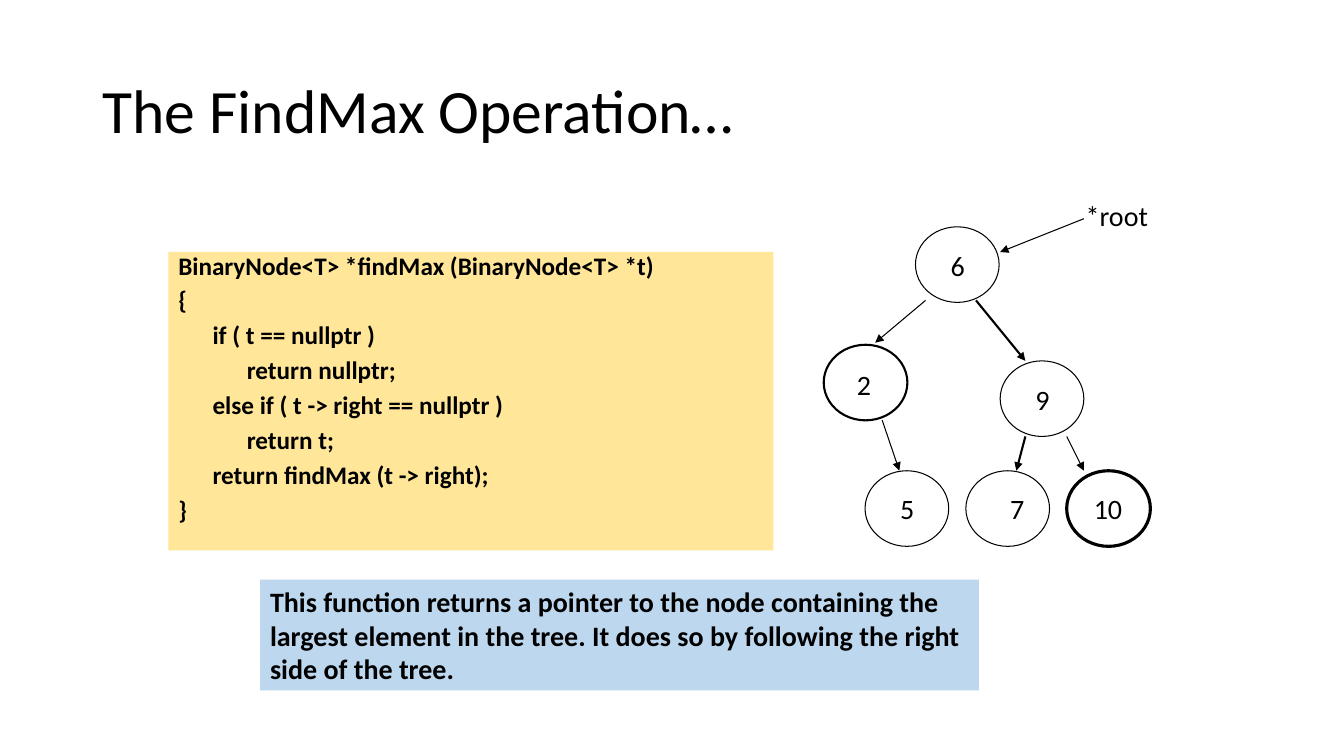
"""Build a slide on finding the largest element of a binary search tree."""
from dataclasses import dataclass

from lxml import etree
from pptx import Presentation, util as u
from pptx.dml.color import RGBColor
from pptx.enum import shapes, text
from pptx.oxml import ns


@dataclass(frozen=True)
class Theme:
    """Colours, font and type sizes."""
    font: str = "Calibri"
    ink: str = "000000"
    sand: str = "FFE699"
    sky: str = "BDD7EE"
    title: int = 44
    code: int = 18
    body: int = 20


class Board:
    """Draws styled elements on one slide."""

    def __init__(self, slide, theme):
        """Keep the slide and its style."""
        self.items = slide.shapes
        self.theme = theme

    def fill_text(self, shape, lines, size, bold=False, wrap=False):
        """Fill a shape with left-aligned paragraphs."""
        frame = shape.text_frame
        frame.text = "\n".join(lines)
        frame.word_wrap = wrap
        frame.vertical_anchor = text.MSO_ANCHOR.TOP
        for par in frame.paragraphs:
            par.alignment = text.PP_ALIGN.LEFT
            for run in par.runs:
                run.font.name = self.theme.font
                run.font.size = u.Pt(size)
                run.font.bold = bold
                run.font.color.rgb = RGBColor.from_string(self.theme.ink)
        return frame

    def label(self, words, box, size):
        """Add a one-line text box."""
        shape = self.items.add_textbox(*map(u.Inches, box))
        return self.fill_text(shape, [words], size)

    def title(self, words, box):
        """Add the slide heading."""
        frame = self.label(words, box, self.theme.title)
        frame.word_wrap = True
        frame.vertical_anchor = text.MSO_ANCHOR.MIDDLE
        frame.paragraphs[0].line_spacing = 0.9

    def shape(self, kind, box):
        """Add a preset shape without a shadow."""
        shape = self.items.add_shape(kind, *map(u.Inches, box))
        shape.shadow.inherit = False
        return shape

    def panel(self, lines, box, fill, size, wrap=False):
        """Add a filled rectangle with bold text."""
        shape = self.shape(shapes.MSO_SHAPE.RECTANGLE, box)
        shape.fill.solid()
        shape.fill.fore_color.rgb = RGBColor.from_string(fill)
        shape.line.fill.background()
        return self.fill_text(shape, lines, size, True, wrap)

    def code(self, rows, box):
        """Add a code panel from pairs of depth and line."""
        lines = [line for _, line in rows]
        frame = self.panel(lines, box, self.theme.sand, self.theme.code, True)
        for par, (depth, _) in zip(frame.paragraphs, rows):
            par.line_spacing = 0.75
            par.space_before = u.Pt(8.7)
            props = par._p.get_or_add_pPr()
            props.set("marL", str(u.Inches(0.34 * depth)))
            props.set("indent", "0")

    def stroke(self, line, width):
        """Set the colour and width of a line."""
        line.color.rgb = RGBColor.from_string(self.theme.ink)
        line.width = u.Pt(width)

    def node(self, x, y, width):
        """Add a tree node outline."""
        shape = self.shape(shapes.MSO_SHAPE.OVAL, (x, y, 0.83, 0.75))
        shape.fill.background()
        self.stroke(shape.line, width)

    def arrow(self, start, end, width):
        """Add a straight arrow."""
        ends = map(u.Inches, (*start, *end))
        link = self.items.add_connector(shapes.MSO_CONNECTOR.STRAIGHT, *ends)
        self.stroke(link.line, width)
        tip = etree.SubElement(link.line._get_or_add_ln(), ns.qn("a:tailEnd"))
        tip.set("type", "triangle")
        etree.SubElement(link._element.spPr, ns.qn("a:effectLst"))


CODE = [
    (0, "BinaryNode<T> *findMax (BinaryNode<T> *t)"),
    (0, "{"),
    (1, "if ( t == nullptr )"),
    (2, "return nullptr;"),
    (1, "else if ( t -> right == nullptr )"),
    (2, "return t;"),
    (1, "return findMax (t -> right);"),
    (0, "}"),
]
NOTE = [
    "This function returns a pointer to the node containing the",
    "largest element in the tree. It does so by following the right",
    "side of the tree.",
]
NODES = [
    ("6", (9.08, 2.25), 0.75, (9.33, 2.42)),
    ("2", (8.17, 3.42), 1.5, (8.4, 3.6)),
    ("9", (9.92, 3.58), 0.75, (10.17, 3.75)),
    ("5", (8.58, 4.67), 0.75, (8.83, 4.83)),
    ("7", (9.58, 4.67), 0.75, (9.92, 4.83)),
    ("10", (10.58, 4.67), 2.25, (10.75, 4.83)),
]
ARROWS = [
    ((10.75, 2.17), (9.92, 2.5), 0.75),
    ((9.18, 2.98), (8.68, 3.4), 0.75),
    ((9.68, 2.98), (10.17, 3.58), 1.5),
    ((8.75, 4.17), (8.92, 4.67), 0.75),
    ((10.17, 4.33), (10.08, 4.67), 1.5),
    ((10.58, 4.33), (10.75, 4.67), 0.75),
]


def main():
    """Build and save the slide."""
    deck = Presentation()
    deck.slide_width, deck.slide_height = u.Inches(13.33), u.Inches(7.5)
    theme = Theme()
    board = Board(deck.slides.add_slide(deck.slide_layouts[6]), theme)
    board.title("The FindMax Operation…", (0.92, 0.4, 11.5, 1.45))
    board.code(CODE, (1.67, 2.5, 6, 2.96))
    for arrow in ARROWS:
        board.arrow(*arrow)
    for value, place, width, spot in NODES:
        board.node(*place, width)
        span = 0.19 + 0.15 * len(value)
        board.label(value, (*spot, span, 0.44), theme.body)
    board.label("*root", (10.67, 1.92, 0.83, 0.44), theme.body)
    board.panel(NOTE, (2.58, 5.75, 7.13, 1.1), theme.sky, theme.body)
    deck.save("out.pptx")


if __name__ == "__main__":
    main()
